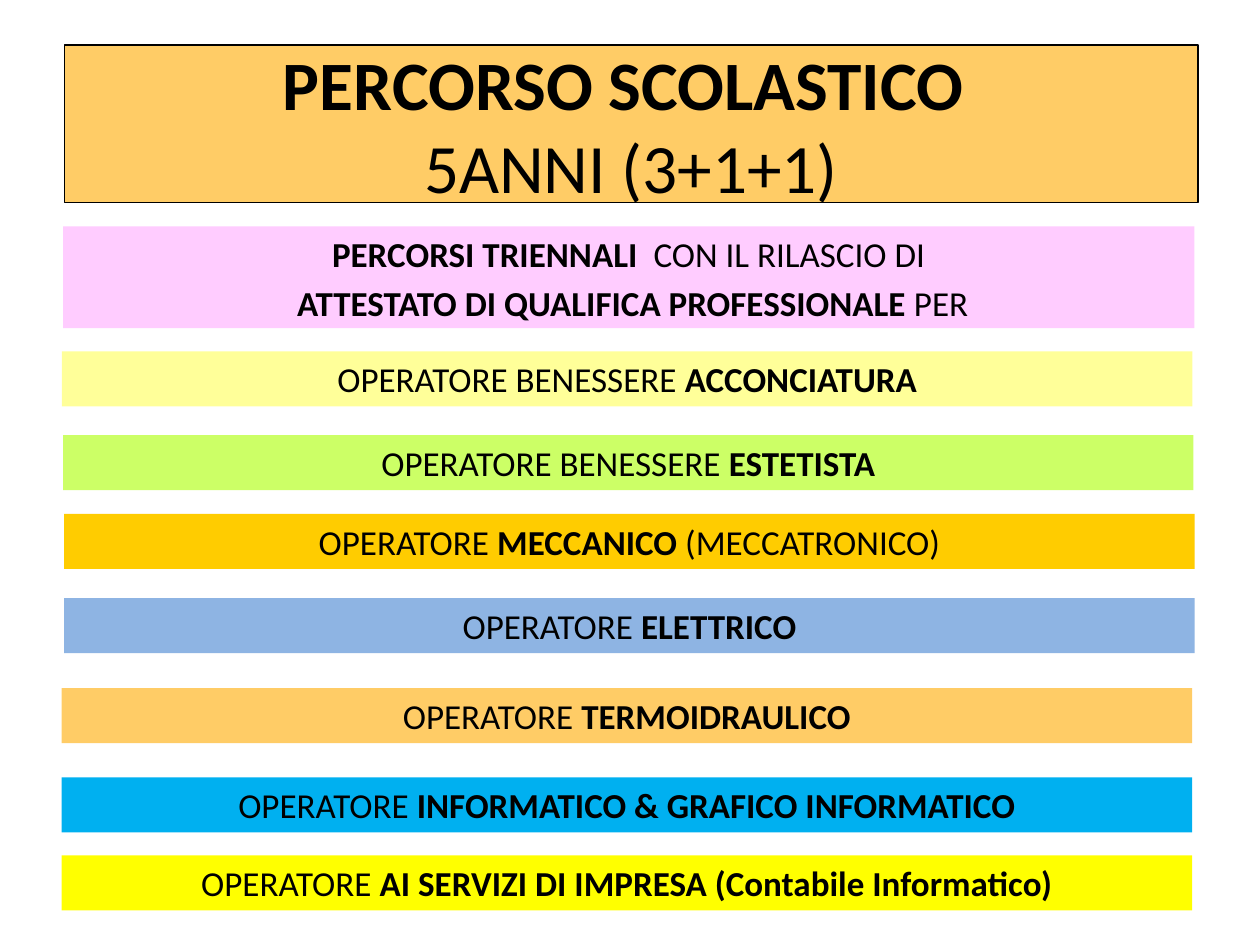
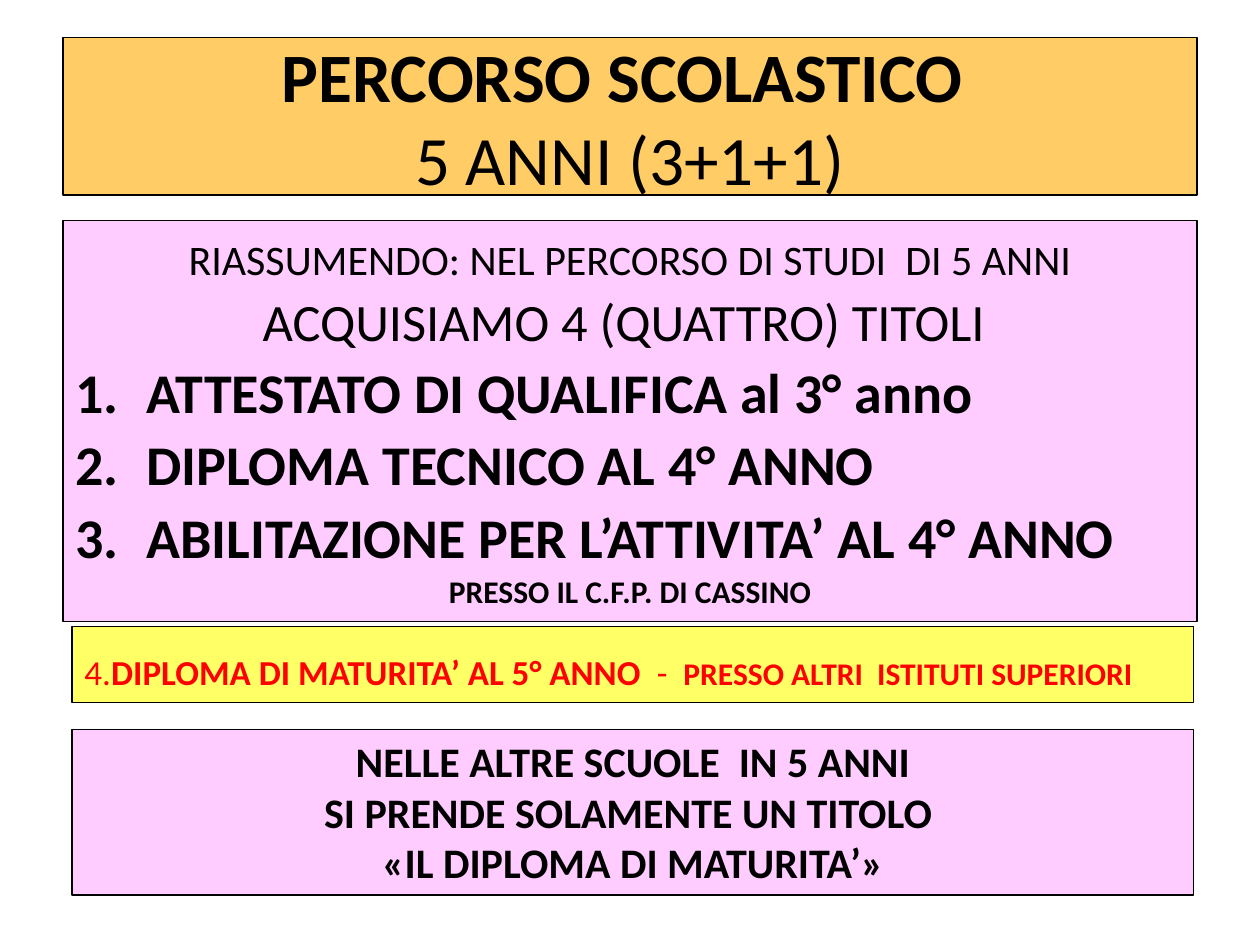
import pptx
import pptx.util
import pptx.dml.color
import pptx.enum.shapes
import pptx.enum.text
import lxml.etree

Pt = pptx.util.Pt
RGB = pptx.dml.color.RGBColor
ALIGN = pptx.enum.text.PP_ALIGN
ANCHOR = pptx.enum.text.MSO_ANCHOR

BLACK = RGB(0x00, 0x00, 0x00)
RED = RGB(0xFF, 0x00, 0x00)
ORANGE = RGB(0xFF, 0xCC, 0x66)
PINK = RGB(0xFF, 0xCC, 0xFF)
CREAM = RGB(0xFF, 0xFF, 0x99)
LIME = RGB(0xCC, 0xFF, 0x66)
GOLD = RGB(0xFF, 0xCC, 0x00)
STEEL = RGB(0x8E, 0xB4, 0xE3)
AZURE = RGB(0x00, 0xB0, 0xF0)
YELLOW = RGB(0xFF, 0xFF, 0x00)
LEMON = RGB(0xFF, 0xFF, 0x66)
FONT = "Calibri"


def add_box(slide, area, fill, lines, edge=True, ink=BLACK, anchor=ANCHOR.TOP):
    box = slide.shapes.add_shape(
        pptx.enum.shapes.MSO_SHAPE.RECTANGLE, *[Pt(v) for v in area])
    box.shadow.inherit = False
    box.fill.solid()
    box.fill.fore_color.rgb = fill
    if edge:
        box.line.color.rgb = BLACK
        box.line.width = Pt(0.75)
    else:
        box.line.fill.background()
    frame = box.text_frame
    frame.word_wrap = True
    frame.vertical_anchor = anchor
    for i, (text, size) in enumerate(lines):
        para = frame.paragraphs[0] if i == 0 else frame.add_paragraph()
        para.alignment = ALIGN.CENTER
        for j, part in enumerate(text.split("*")):
            if part:
                run = para.add_run()
                run.text = part
                run.font.name = FONT
                run.font.size = Pt(size)
                run.font.bold = j % 2 == 1
                run.font.color.rgb = ink
    return frame


def add_title(slide, left, top, years):
    add_box(slide, (left, top, 648, 90), ORANGE,
            [("*PERCORSO SCOLASTICO *", 39.6), (years, 39.6)],
            anchor=ANCHOR.MIDDLE)


deck = pptx.Presentation()
deck.slide_width = Pt(720)
deck.slide_height = Pt(540)
blank = deck.slide_layouts[6]

slide = deck.slides.add_slide(blank)
add_title(slide, 36.7, 25.8, "5ANNI (3+1+1)")
frame = add_box(slide, (36, 129.4, 646.5, 58.2), PINK, [
    ("*PERCORSI TRIENNALI*  CON IL RILASCIO DI", 20),
    (" *ATTESTATO DI QUALIFICA PROFESSIONALE *PER", 20)], edge=False)
frame.paragraphs[1].space_before = Pt(4)

bars = [
    (35.4, 200.8, CREAM, "BENESSERE *ACCONCIATURA*"),
    (36, 248.6, LIME, "BENESSERE *ESTETISTA*"),
    (36.7, 293.6, GOLD, "*MECCANICO* (MECCATRONICO)"),
    (36.7, 341.8, STEEL, "*ELETTRICO*"),
    (35.2, 393.2, ORANGE, "*TERMOIDRAULICO*"),
    (35.2, 444.2, AZURE, "*INFORMATICO & GRAFICO INFORMATICO*"),
    (35.2, 488.8, YELLOW, "*AI SERVIZI DI IMPRESA (Contabile Informatico)*"),
]
for left, top, fill, job in bars:
    add_box(slide, (left, top, 646, 31.5), fill,
            [("OPERATORE " + job, 20)], edge=False)

slide = deck.slides.add_slide(blank)
add_title(slide, 36, 21.4, "5 ANNI (3+1+1)")
frame = add_box(slide, (36, 126, 648, 229), PINK, [
    ("RIASSUMENDO: NEL PERCORSO DI STUDI  DI 5 ANNI", 24),
    ("ACQUISIAMO 4 (QUATTRO) TITOLI ", 30),
    ("*ATTESTATO DI QUALIFICA al 3° anno*", 32),
    ("*DIPLOMA TECNICO AL 4° ANNO*", 32),
    ("*ABILITAZIONE PER L’ATTIVITA’ AL 4° ANNO*", 32),
    ("*PRESSO IL C.F.P. DI CASSINO*", 18)])
frame.margin_top = Pt(5)
for para in frame.paragraphs:
    para.line_spacing = 1.08
for para in frame.paragraphs[2:5]:
    para.alignment = ALIGN.LEFT
    props = para._p.get_or_add_pPr()
    props.set("marL", str(Pt(40.5)))
    props.set("indent", str(-Pt(40.5)))
    mark = lxml.etree.SubElement(props, pptx.oxml.ns.qn("a:buFont"))
    mark.set("typeface", FONT)
    mark = lxml.etree.SubElement(props, pptx.oxml.ns.qn("a:buAutoNum"))
    mark.set("type", "arabicPeriod")

frame = add_box(slide, (41.2, 358, 641, 43.6), LEMON, [
    ("4.*DIPLOMA DI MATURITA’ AL 5° ANNO*  -  "
     "*PRESSO ALTRI  ISTITUTI SUPERIORI* ", 20)], ink=RED)
para = frame.paragraphs[0]
para.alignment = ALIGN.LEFT
para.runs[3].font.size = Pt(18)
para.runs[4].font.size = Pt(30)

add_box(slide, (41.2, 416.8, 641, 94.6), PINK, [
    ("*NELLE ALTRE SCUOLE  IN 5 ANNI*", 24),
    ("*SI PRENDE SOLAMENTE UN TITOLO *", 24),
    ("*«IL DIPLOMA DI MATURITA’»*", 24)])

deck.save("out.pptx")
